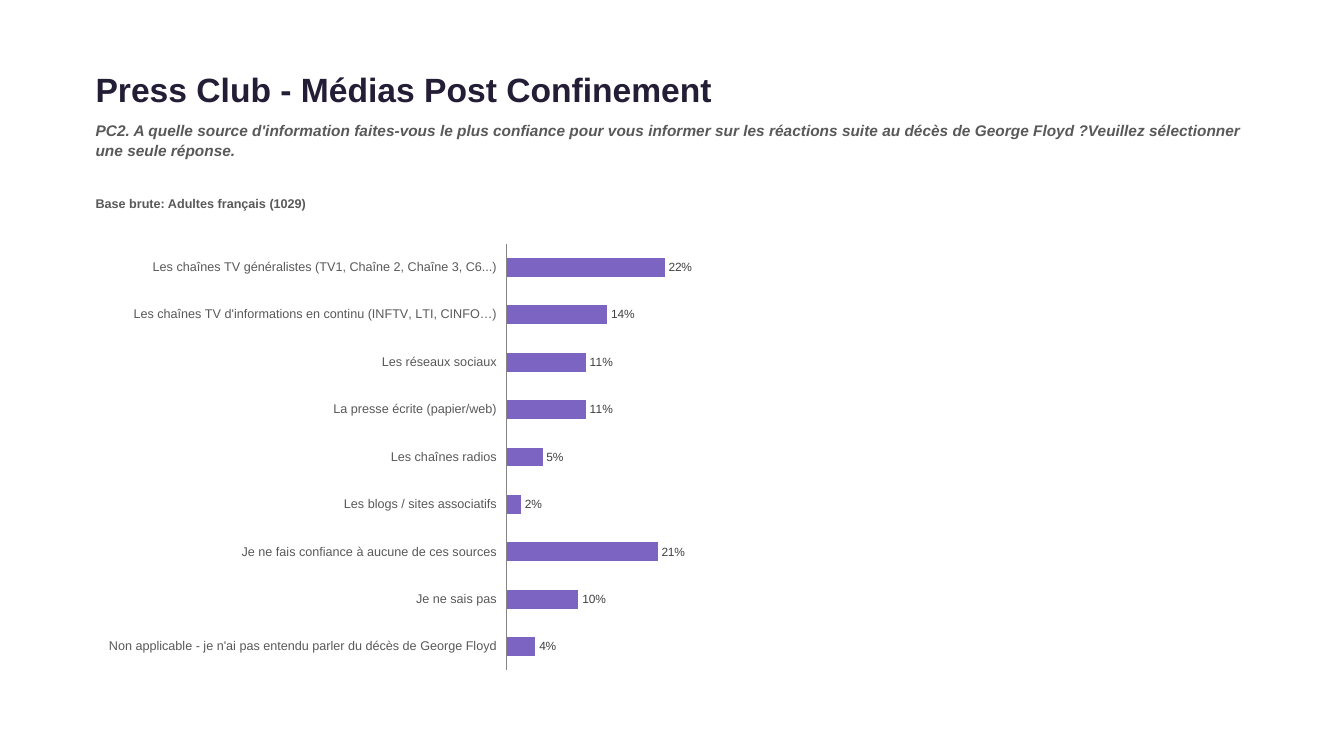
import pptx
import pptx.chart.data
import pptx.dml.color
import pptx.enum.chart
import pptx.enum.text
import pptx.util
from lxml import etree

TITLE = "Press Club - Médias Post Confinement"
QUESTION = (
    "PC2. A quelle source d'information faites-vous le plus confiance pour vous informer "
    "sur les réactions suite au décès de George Floyd ?Veuillez sélectionner une seule réponse."
)
BASE = "Base brute: Adultes français (1029)"
SOURCES = [
    ("Les chaînes TV généralistes (TV1, Chaîne 2, Chaîne 3, C6...)", 0.22),
    ("Les chaînes TV d'informations en continu (INFTV, LTI, CINFO…)", 0.14),
    ("Les réseaux sociaux", 0.11),
    ("La presse écrite (papier/web)", 0.11),
    ("Les chaînes radios", 0.05),
    ("Les blogs / sites associatifs", 0.02),
    ("Je ne fais confiance à aucune de ces sources", 0.21),
    ("Je ne sais pas", 0.10),
    ("Non applicable - je n'ai pas entendu parler du décès de George Floyd", 0.04),
]
COLORS = {"title": "241D36", "text": "595959", "value": "404040",
          "bar": "7C64C3", "axis": "868686"}
FONT = "Arial"

WIDTH, HEIGHT = 13.33, 7.5
LEFT, TEXT_WIDTH, CHART_WIDTH = 0.85, 11.63, 11.5
TITLE_TOP, QUESTION_TOP, BASE_TOP, CHART_TOP, CHART_BOTTOM = 0.63, 1.14, 1.89, 2.33, 6.74
# Shares of the chart's frame taken by the bars
PLOT = {"x": 0.363, "y": 0.02, "w": 0.62, "h": 0.96}

inches = pptx.util.Inches
presentation = pptx.Presentation()
presentation.slide_width, presentation.slide_height = inches(WIDTH), inches(HEIGHT)
slide = presentation.slides.add_slide(presentation.slide_layouts[6])


def rgb(name):
    return pptx.dml.color.RGBColor.from_string(COLORS[name])


def style(font, size, color, bold=False, italic=False):
    font.name, font.size = FONT, pptx.util.Pt(size)
    font.bold, font.italic = bold, italic
    font.color.rgb = rgb(color)


def add_heading(text, top, bottom, size, color, italic=False, middle=False, spacing=1.0):
    box = slide.shapes.add_textbox(
        inches(LEFT), inches(top), inches(TEXT_WIDTH), inches(bottom - top))
    frame = box.text_frame
    frame.word_wrap = True
    anchors = pptx.enum.text.MSO_ANCHOR
    frame.vertical_anchor = anchors.MIDDLE if middle else anchors.TOP
    paragraph = frame.paragraphs[0]
    paragraph.line_spacing = spacing
    run = paragraph.add_run()
    run.text = text
    style(run.font, size, color, bold=True, italic=italic)


def fix_plot_area(chart):
    """Pin the inner plot area to the PLOT shares."""
    plot_area = chart.plots[0]._element.getparent()
    namespace = etree.QName(plot_area).namespace
    for old in plot_area.findall(f"{{{namespace}}}layout"):
        plot_area.remove(old)
    layout = etree.Element(f"{{{namespace}}}layout")
    manual = etree.SubElement(layout, f"{{{namespace}}}manualLayout")
    settings = [("layoutTarget", "inner"), ("xMode", "edge"), ("yMode", "edge"), *PLOT.items()]
    for tag, value in settings:
        etree.SubElement(manual, f"{{{namespace}}}{tag}").set("val", str(value))
    plot_area.insert(0, layout)


def add_sources_chart():
    data = pptx.chart.data.CategoryChartData(number_format="0%")
    bottom_up = SOURCES[::-1]
    data.categories = [source for source, _ in bottom_up]
    data.add_series("Series 1", [share for _, share in bottom_up])
    enums = pptx.enum.chart
    chart = slide.shapes.add_chart(
        enums.XL_CHART_TYPE.BAR_CLUSTERED, inches(LEFT), inches(CHART_TOP),
        inches(CHART_WIDTH), inches(CHART_BOTTOM - CHART_TOP), data).chart
    chart.has_legend = chart.has_title = False
    style(chart.font, 9, "text")

    sources_axis, share_axis = chart.category_axis, chart.value_axis
    sources_axis.major_tick_mark = enums.XL_TICK_MARK.NONE
    sources_axis.tick_label_position = enums.XL_TICK_LABEL_POSITION.LOW
    sources_axis.format.line.color.rgb = rgb("axis")
    style(sources_axis.tick_labels.font, 9, "text")
    share_axis.minimum_scale, share_axis.maximum_scale = 0, 1
    share_axis.major_unit = 0.1
    share_axis.has_major_gridlines = False
    share_axis.visible = False

    bars = chart.plots[0]
    bars.gap_width, bars.overlap = 150, -10
    bars.vary_by_categories = False
    fill = bars.series[0].format.fill
    fill.solid()
    fill.fore_color.rgb = rgb("bar")
    bars.has_data_labels = True
    labels = bars.data_labels
    labels.show_value = True
    labels.number_format, labels.number_format_is_linked = "0%", False
    labels.position = enums.XL_LABEL_POSITION.OUTSIDE_END
    style(labels.font, 8.5, "value")
    fix_plot_area(chart)


add_heading(TITLE, TITLE_TOP, QUESTION_TOP, 24, "title", middle=True)
add_heading(QUESTION, QUESTION_TOP, BASE_TOP, 11, "text", italic=True, spacing=1.07)
add_heading(BASE, BASE_TOP, CHART_TOP, 9, "text")
add_sources_chart()
presentation.save("out.pptx")
